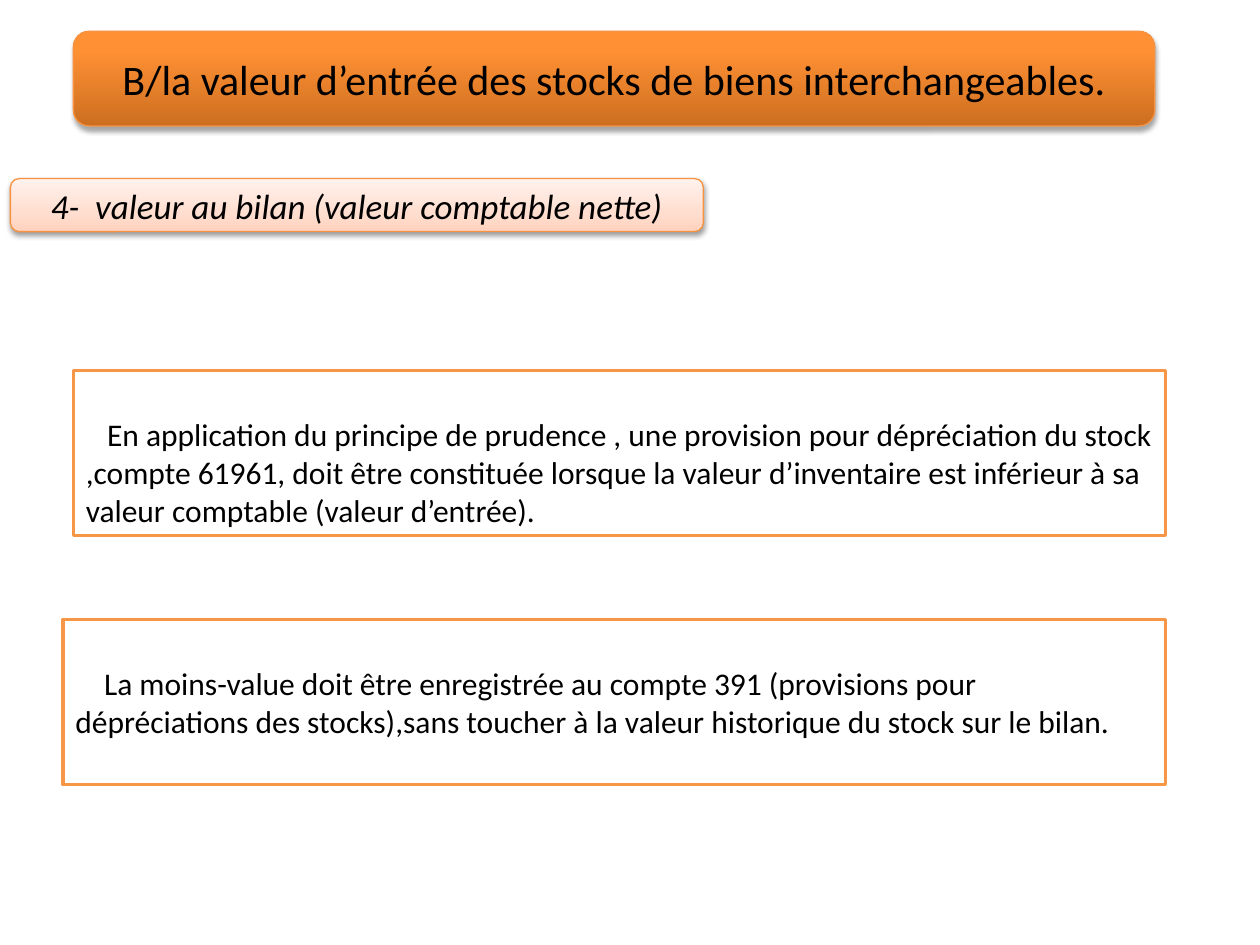
from copy import deepcopy

from lxml import etree
from pptx import Presentation
from pptx.dml.color import RGBColor
from pptx.enum.shapes import MSO_SHAPE
from pptx.enum.text import MSO_ANCHOR, PP_ALIGN
from pptx.oxml.ns import qn
from pptx.util import Cm, Pt

ROUNDED, RECTANGLE = MSO_SHAPE.ROUNDED_RECTANGLE, MSO_SHAPE.RECTANGLE
MIDDLE, TOP = MSO_ANCHOR.MIDDLE, MSO_ANCHOR.TOP
CENTER, LEFT = PP_ALIGN.CENTER, PP_ALIGN.LEFT

COLORS = {
    "text": "000000",
    "paper": "FFFFFF",
    "banner_line": "F69240",
    "box_line": "F79646",
    "shadow": "000000",
}
TITLE_GRADIENT = {0: "CC6E20", 80: "FF9034", 100: "FF9136"}
SUBTITLE_GRADIENT = {0: "FFD2BD", 35: "FFDED0", 100: "FFF2ED"}


class SlideBuilder:
    """Hold the style and the current slide, and add its elements."""

    font_name = "Calibri"

    def __init__(self, slide):
        self.slide = slide

    def color(self, name):
        return RGBColor.from_string(COLORS[name])

    def add_shape(self, kind, place, line_color, line_width):
        shape = self.slide.shapes.add_shape(kind, *[Cm(length) for length in place])
        shape.line.color.rgb = self.color(line_color)
        shape.line.width = Pt(line_width)
        shape.shadow.inherit = False
        return shape

    def set_gradient(self, shape, gradient):
        shape.fill.gradient()
        shape.fill.gradient_angle = 90
        stops = shape._element.spPr.find(".//" + qn("a:gsLst"))
        stops.insert(1, deepcopy(stops[0]))
        for stop, (position, value) in zip(shape.fill.gradient_stops, gradient.items()):
            stop.position = position / 100
            stop.color.rgb = RGBColor.from_string(value)

    def set_shadow(self, shape, distance, opacity):
        effects = shape._element.spPr.find(qn("a:effectLst"))
        settings = {"blurRad": Pt(3.1), "dist": Pt(distance), "dir": 90 * 60000, "rotWithShape": 0}
        shadow = etree.SubElement(
            effects, qn("a:outerShdw"), {name: str(int(value)) for name, value in settings.items()}
        )
        color = etree.SubElement(shadow, qn("a:srgbClr"), val=COLORS["shadow"])
        etree.SubElement(color, qn("a:alpha"), val=str(opacity * 1000))

    def add_text(self, shape, text, alignment, frame_format, font_format):
        frame = shape.text_frame
        frame.word_wrap = True
        for name, value in frame_format.items():
            setattr(frame, name, value)
        paragraph = frame.paragraphs[0]
        paragraph.alignment = alignment
        run = paragraph.add_run()
        run.text = text
        run.font.color.rgb = self.color("text")
        for name, value in {"name": self.font_name, **font_format}.items():
            setattr(run.font, name, value)
        return paragraph

    def add_banner(self, text, place, gradient, shadow, font_format):
        shape = self.add_shape(ROUNDED, place, "banner_line", 0.75)
        self.set_gradient(shape, gradient)
        self.set_shadow(shape, *shadow)
        self.add_text(shape, text, CENTER, {"vertical_anchor": MIDDLE}, font_format)

    def add_box(self, text, place, indent):
        shape = self.add_shape(RECTANGLE, place, "box_line", 2)
        shape.fill.solid()
        shape.fill.fore_color.rgb = self.color("paper")
        frame_format = {"vertical_anchor": TOP, "margin_top": Cm(0.9)}
        paragraph = self.add_text(shape, text, LEFT, frame_format, {"size": Pt(18)})
        paragraph._p.get_or_add_pPr().set("indent", str(Cm(indent)))


def main():
    presentation = Presentation()
    presentation.slide_width, presentation.slide_height = Cm(25.4), Cm(19.05)
    builder = SlideBuilder(presentation.slides.add_slide(presentation.slide_layouts[6]))

    builder.add_banner(
        "B/la valeur d’entrée des stocks de biens interchangeables.",
        (1.48, 0.63, 21.8, 1.91), TITLE_GRADIENT, (1.8, 35), {"size": Pt(24)},
    )
    builder.add_banner(
        "4-  valeur au bilan (valeur comptable nette)",
        (0.21, 3.6, 13.97, 1.07), SUBTITLE_GRADIENT, (1.6, 38), {"size": Pt(20), "italic": True},
    )
    builder.add_box(
        "En application du principe de prudence , une provision pour dépréciation du stock "
        ",compte 61961, doit être constituée lorsque la valeur d’inventaire est inférieur à sa "
        "valeur comptable (valeur d’entrée).",
        (1.48, 7.47, 22.02, 3.33), 0.43,
    )
    builder.add_box(
        "La moins-value doit être enregistrée au compte 391 (provisions pour dépréciations "
        "des stocks),sans toucher à la valeur historique du stock sur le bilan.",
        (1.27, 12.49, 22.23, 3.33), 0.58,
    )
    presentation.save("out.pptx")


if __name__ == "__main__":
    main()
